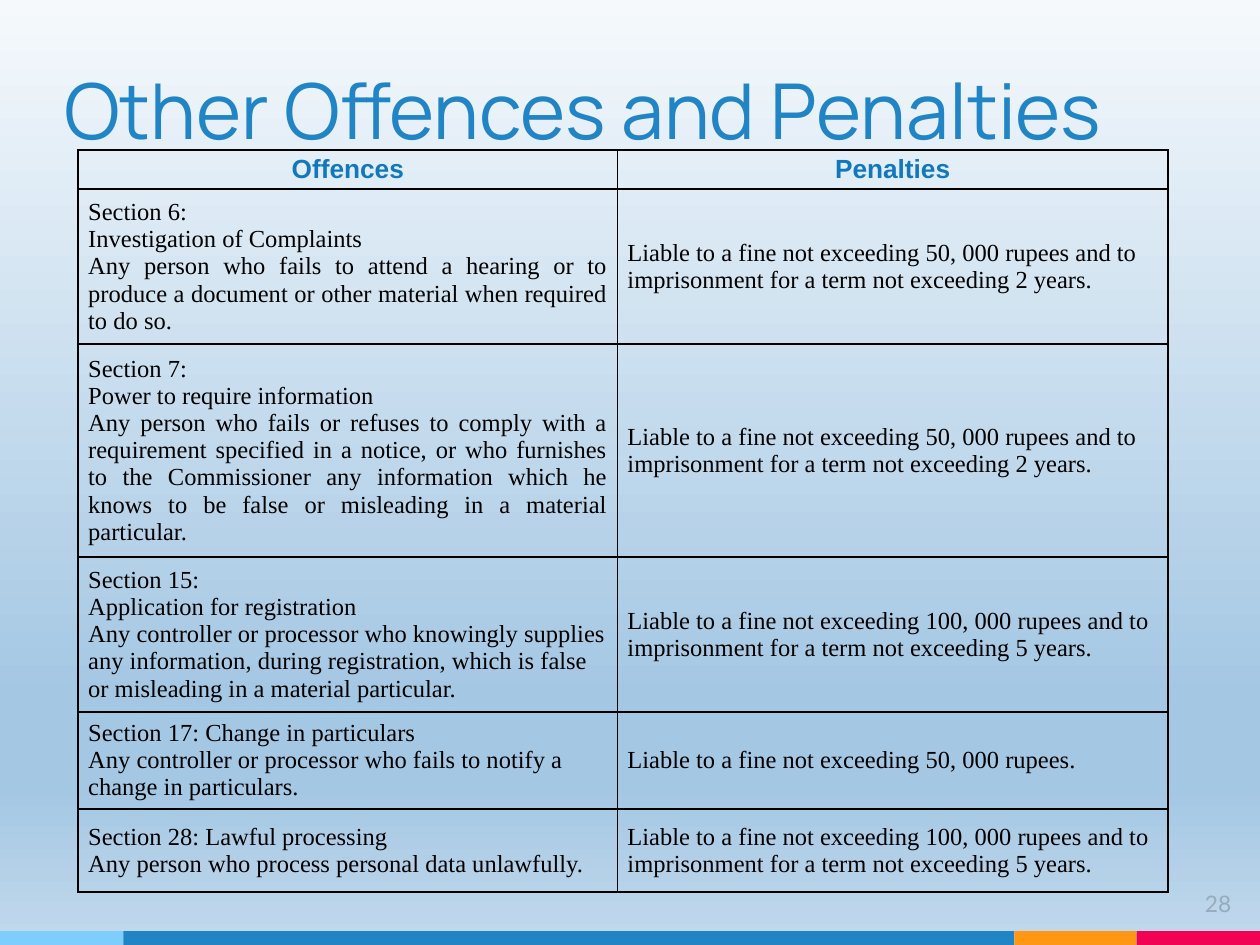
from dataclasses import dataclass

from lxml.etree import SubElement
from pptx import Presentation
from pptx.dml.color import RGBColor
from pptx.enum.shapes import MSO_SHAPE
from pptx.enum.text import MSO_ANCHOR, MSO_AUTO_SIZE, PP_ALIGN
from pptx.oxml import parse_xml
from pptx.oxml.ns import nsdecls, qn
from pptx.util import Inches, Pt


@dataclass(frozen=True)
class TextStyle:
    """Font, size and colour of a run."""
    font: str
    size: float
    color: str
    bold: bool = False


@dataclass(frozen=True)
class Theme:
    """Colours and type styles of the slide."""
    title: TextStyle = TextStyle("Manrope", 44, "2185C5")
    header: TextStyle = TextStyle("Arial", 15, "1178BD", True)
    body: TextStyle = TextStyle("Times New Roman", 14, "000000")
    number: TextStyle = TextStyle("Lato", 13, "97ABBC")
    border: str = "000000"
    background: tuple = ((0, "F5F9FC"), (74, "A4C7E3"), (83, "A4C7E3"), (100, "C2D9EC"))
    stripes: tuple = (("7ECEFD", 0.98), ("2185C5", 7.07), ("FF9715", 0.97), ("F20253", 0.98))


class SlideBuilder:
    """Draws styled elements on one slide."""

    def __init__(self, slide, theme):
        self.slide = slide
        self.theme = theme

    def add_background(self):
        """Fill the slide with a vertical gradient."""
        stops = "".join(
            f'<a:gs pos="{position * 1000}"><a:srgbClr val="{color}"/></a:gs>'
            for position, color in self.theme.background
        )
        background = parse_xml(
            f'<p:bg {nsdecls("p", "a")}><p:bgPr><a:gradFill rotWithShape="1">'
            f'<a:gsLst>{stops}</a:gsLst><a:lin ang="5400000" scaled="0"/>'
            '</a:gradFill><a:effectLst/></p:bgPr></p:bg>'
        )
        self.slide.element.cSld.insert(0, background)

    def add_stripes(self, top, height):
        """Lay coloured bars side by side along the bottom."""
        left = 0
        for color, width in self.theme.stripes:
            shape = self.slide.shapes.add_shape(
                MSO_SHAPE.RECTANGLE, Inches(left), Inches(top), Inches(width), Inches(height)
            )
            shape.shadow.inherit = False
            shape.fill.solid()
            shape.fill.fore_color.rgb = RGBColor.from_string(color)
            shape.line.fill.background()
            left += width

    def add_text(self, paragraph, text, style, alignment):
        """Add one styled run to a paragraph."""
        paragraph.alignment = alignment
        run = paragraph.add_run()
        run.text = text
        run.font.name = style.font
        run.font.size = Pt(style.size)
        run.font.bold = style.bold
        run.font.color.rgb = RGBColor.from_string(style.color)

    def format_frame(self, frame, anchor):
        """Set equal insets and fixed size on a text frame."""
        frame.word_wrap = True
        frame.auto_size = MSO_AUTO_SIZE.NONE
        frame.vertical_anchor = anchor
        frame.margin_left = frame.margin_right = Inches(0.1)
        frame.margin_top = frame.margin_bottom = Inches(0.1)

    def add_title(self, text, left, top, width, height):
        """Place and fill the title placeholder."""
        title = self.slide.shapes.title
        title.left, title.top = Inches(left), Inches(top)
        title.width, title.height = Inches(width), Inches(height)
        self.format_frame(title.text_frame, MSO_ANCHOR.BOTTOM)
        paragraph = title.text_frame.paragraphs[0]
        self.add_text(paragraph, text, self.theme.title, PP_ALIGN.JUSTIFY)
        paragraph._p.get_or_add_pPr().set("marL", str(Inches(0.04)))

    def add_number(self, text, left, top, width, height):
        """Add the slide number."""
        box = self.slide.shapes.add_textbox(
            Inches(left), Inches(top), Inches(width), Inches(height)
        )
        self.format_frame(box.text_frame, MSO_ANCHOR.TOP)
        self.add_text(box.text_frame.paragraphs[0], text, self.theme.number, PP_ALIGN.RIGHT)

    def format_cell(self, cell, lines, style, alignment, anchor):
        """Fill a cell with text and draw its borders."""
        cell.margin_left = cell.margin_right = Inches(0.08)
        cell.margin_top = cell.margin_bottom = Inches(0.04)
        cell.vertical_anchor = anchor
        properties = cell._tc.get_or_add_tcPr()
        for side in ("a:lnL", "a:lnR", "a:lnT", "a:lnB"):
            line = SubElement(properties, qn(side), w=str(Pt(1)))
            fill = SubElement(line, qn("a:solidFill"))
            SubElement(fill, qn("a:srgbClr"), val=self.theme.border)
        cell.fill.background()
        frame = cell.text_frame
        for index, text in enumerate(lines):
            paragraph = frame.add_paragraph() if index else frame.paragraphs[0]
            self.add_text(paragraph, text, style, alignment)

    def add_table(self, headers, rows, left, top, widths, heights):
        """Add a bordered table with a centred header row."""
        table = self.slide.shapes.add_table(
            len(heights), len(widths), Inches(left), Inches(top),
            Inches(sum(widths)), Inches(sum(heights))
        ).table
        table.first_row = table.horz_banding = False
        for column, width in zip(table.columns, widths):
            column.width = Inches(width)
        for row, height in zip(table.rows, heights):
            row.height = Inches(height)
        for index, text in enumerate(headers):
            self.format_cell(
                table.cell(0, index), [text], self.theme.header, PP_ALIGN.CENTER, MSO_ANCHOR.TOP
            )
        for index, (alignment, offence, penalty) in enumerate(rows, 1):
            self.format_cell(
                table.cell(index, 0), offence, self.theme.body, alignment, MSO_ANCHOR.MIDDLE
            )
            self.format_cell(
                table.cell(index, 1), [penalty], self.theme.body, PP_ALIGN.LEFT, MSO_ANCHOR.MIDDLE
            )


def penalty_text(amount, years):
    """Word a fine with imprisonment."""
    return (f"Liable to a fine not exceeding {amount} rupees and to "
            f"imprisonment for a term not exceeding {years} years.")


OFFENCES = [
    (PP_ALIGN.JUSTIFY, [
        "Section 6:",
        "Investigation of Complaints",
        "Any person who fails to attend a hearing or to produce a document or other "
        "material when required to do so.",
    ], penalty_text("50, 000", 2)),
    (PP_ALIGN.JUSTIFY, [
        "Section 7:",
        "Power to require information",
        "Any person who fails or refuses to comply with a requirement specified in a "
        "notice, or who furnishes to the Commissioner any information which he knows "
        "to be false or misleading in a material particular.",
    ], penalty_text("50, 000", 2)),
    (PP_ALIGN.LEFT, [
        "Section 15:",
        "Application for registration",
        "Any controller or processor who knowingly supplies any information, during "
        "registration, which is false or misleading in a material particular.",
    ], penalty_text("100, 000", 5)),
    (PP_ALIGN.LEFT, [
        "Section 17: Change in particulars",
        "Any controller or processor who fails to notify a change in particulars.",
    ], "Liable to a fine not exceeding 50, 000 rupees."),
    (PP_ALIGN.LEFT, [
        "Section 28: Lawful processing",
        "Any person who process personal data unlawfully.",
    ], penalty_text("100, 000", 5)),
]


def main():
    """Build and save the presentation."""
    presentation = Presentation()
    presentation.slide_width, presentation.slide_height = Inches(10), Inches(7.5)
    slide = presentation.slides.add_slide(presentation.slide_layouts[5])
    builder = SlideBuilder(slide, Theme())
    builder.add_background()
    builder.add_stripes(7.39, 0.11)
    builder.add_title("Other Offences and Penalties", 0.37, 0.33, 8.78, 1)
    builder.add_number("28", 9.27, 6.96, 0.6, 0.46)
    builder.add_table(
        ("Offences", "Penalties"), OFFENCES, 0.62, 1.19,
        (4.28, 4.37), (0.26, 1.23, 1.69, 1.23, 0.77, 0.66)
    )
    presentation.save("out.pptx")


if __name__ == "__main__":
    main()
